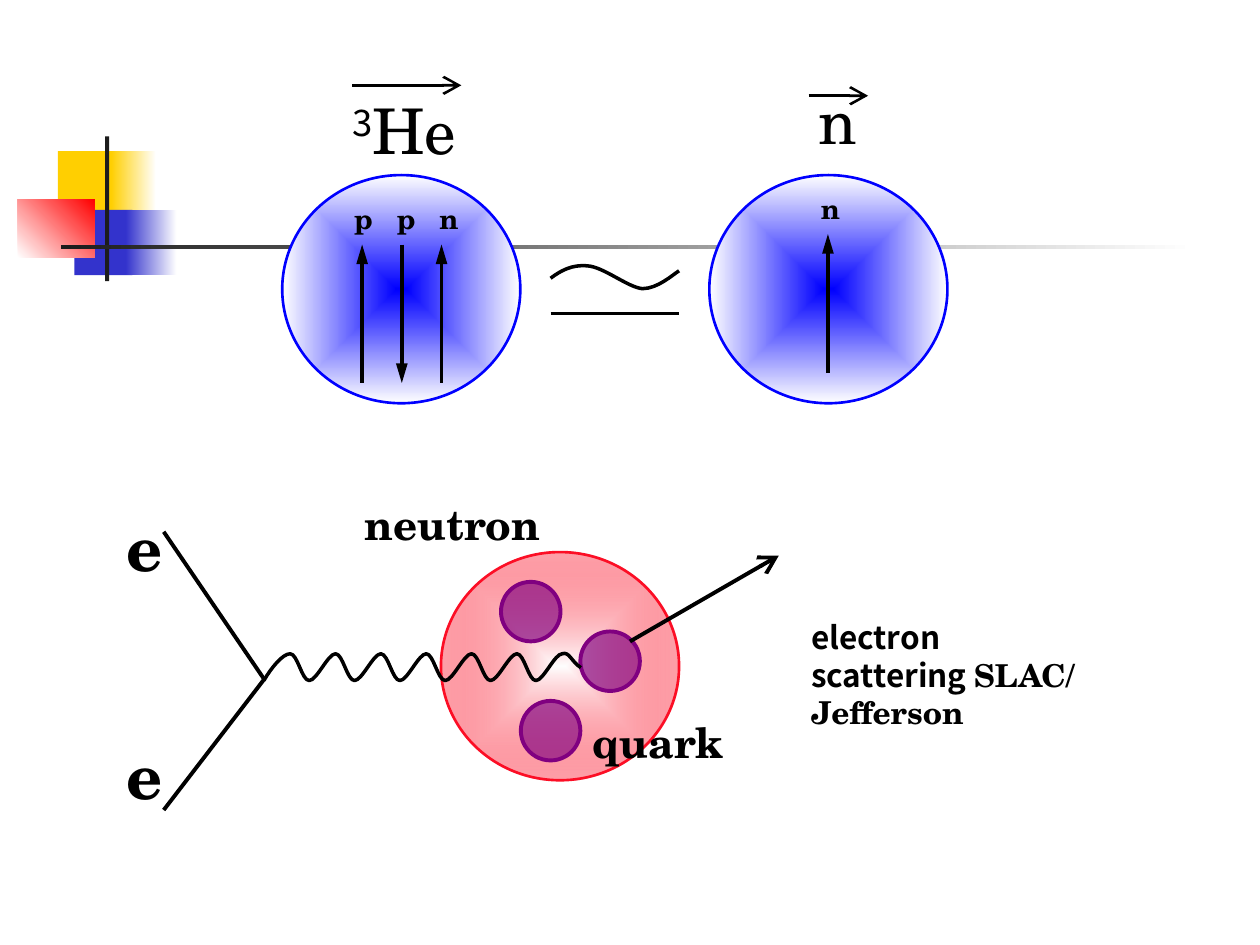
import pptx
import pptx.util
import pptx.dml.color
import pptx.enum.shapes
import pptx.enum.text
import pptx.oxml.ns
from lxml import etree

Cm, Pt = pptx.util.Cm, pptx.util.Pt
RGB = pptx.dml.color.RGBColor.from_string
KIND = pptx.enum.shapes.MSO_SHAPE
qn = pptx.oxml.ns.qn


class Theme:
    black, dark, white = "000000", "1C1C1C", "FFFFFF"
    gold, navy, red = "FFCF01", "3333CC", "FF0000"
    blue, rose, plum = "0000FF", "FC0E25", "800080"
    serif, sans = "TeX Gyre Schola", "Noto Sans CJK KR"
    big, mid, note, small = 36, 24, 18, 16


T = Theme

deck = pptx.Presentation()
deck.slide_width, deck.slide_height = Cm(25.4), Cm(19.05)
slide = deck.slides.add_slide(deck.slide_layouts[6])
shapes = slide.shapes


def draw(kind, box, first, last=None, angle=0, edge=None, alpha=None):
    """Add a shape; a second colour makes a gradient, angle None a radial one."""
    item = shapes.add_shape(kind, *map(Cm, box))
    item.shadow.inherit = False
    fill = item.fill
    if last:
        fill.gradient()
        for stop, tone in zip(fill.gradient_stops, (first, last)):
            stop.color.rgb = RGB(tone)
        if angle is None:
            lin = fill._xPr.find(".//" + qn("a:lin"))
            ring = etree.Element(qn("a:path"), {"path": "shape"})
            sides = {side: "50000" for side in "ltrb"}
            etree.SubElement(ring, qn("a:fillToRect"), sides)
            lin.getparent().replace(lin, ring)
        else:
            fill.gradient_angle = angle
    else:
        fill.solid()
        fill.fore_color.rgb = RGB(first)
    if alpha:
        # The last fill colour is the see-through one
        tones = fill._xPr.findall(".//" + qn("a:srgbClr"))
        etree.SubElement(tones[-1], qn("a:alpha"), val=str(alpha * 1000))
    if edge:
        item.line.color.rgb = RGB(edge[0])
        item.line.width = Pt(edge[1])
    else:
        item.line.fill.background()


def curve(start, spots):
    """Trace cubic curves; spots hold two handles and an end point for each."""
    pen = shapes.build_freeform(*map(Cm, start))
    pen.add_line_segments([tuple(map(Cm, spot)) for spot in spots], close=False)
    item = pen.convert_to_shape()
    # Join every three straight steps into one cubic curve
    steps = list(item._element.iter(qn("a:lnTo")))
    for i in range(0, len(steps), 3):
        bend = etree.Element(qn("a:cubicBezTo"))
        steps[i].addprevious(bend)
        for step in steps[i:i + 3]:
            bend.append(step[0])
            step.getparent().remove(step)
    item.shadow.inherit = False
    item.fill.background()
    item.line.color.rgb = RGB(T.black)
    item.line.width = Pt(2)


# Corner ornament and fading rule
for box, first, last, angle in [
    ((1.17, 3.05, 1.22, 1.32), T.gold, None, 0),
    ((2.24, 3.05, 0.91, 1.32), T.gold, T.white, 0),
    ((1.5, 4.23, 1.17, 1.32), T.navy, None, 0),
    ((2.54, 4.23, 1.02, 1.32), T.navy, T.white, 0),
    ((0.36, 4.02, 1.55, 1.17), T.white, T.red, 45),
    ((2.12, 2.75, 0.08, 2.92), T.dark, None, 0),
    ((1.23, 4.94, 22.86, 0.08), T.dark, T.white, 0),
]:
    draw(KIND.RECTANGLE, box, first, last, angle)

# Nuclei, neutron and its quarks
for left in (5.69, 14.3):
    draw(KIND.OVAL, (left, 3.53, 4.8, 4.6), T.blue, T.white, None, (T.blue, 1.5))
draw(KIND.OVAL, (8.89, 11.13, 4.8, 4.6), T.white, T.rose, None, (T.rose, 1.5), 39)
for left, top in [(11.7, 12.73), (10.1, 11.73), (10.5, 14.13)]:
    draw(KIND.OVAL, (left, top, 1.2, 1.2), T.plum, edge=(T.plum, 2.25), alpha=65)

# Tilde of the "nearly equal" sign
curve((11.1, 5.61), [
    (11.3, 5.46), (11.53, 5.33), (11.84, 5.36),
    (12.17, 5.38), (12.65, 5.79), (12.95, 5.82),
    (13.26, 5.82), (13.56, 5.54), (13.69, 5.46),
])

# Photon wave: six full periods, then a last crest that meets the quark
low, high, rise, pitch = 13.72, 13.18, 0.53, 0.914
wave = []
for turn in range(7):
    foot = 5.32 + turn * pitch
    crest, after = foot + rise, foot + pitch
    lift = low if turn else 13.46
    wave += [(foot + 0.15, lift), (crest - 0.15, high), (crest, high)]
    if turn < 6:
        wave += [(crest + 0.15, high), (after - 0.15, low), (after, low)]
wave += [(11.48, 13.13), (11.51, 13.33), (11.71, 13.46)]
curve((5.32, low), wave)

# Lines and arrows, each from its foot to its tip
for x1, y1, x2, y2, width, tip, girth in [
    (7.3, 7.72, 7.3, 4.93, 2.25, "triangle", "med"),
    (8.1, 4.93, 8.1, 7.72, 2.25, "triangle", "med"),
    (8.9, 7.72, 8.9, 4.93, 2.25, "triangle", "med"),
    (16.69, 7.52, 16.69, 4.72, 2.25, "triangle", "med"),
    (7.1, 1.72, 9.3, 1.72, 1.5, "arrow", "lg"),
    (16.3, 1.93, 17.5, 1.93, 1.5, "arrow", "lg"),
    (11.1, 6.32, 13.69, 6.32, 2, None, None),
    (3.3, 10.72, 5.33, 13.7, 2.25, None, None),
    (5.32, 13.7, 3.3, 16.33, 2.25, None, None),
    (12.7, 12.93, 15.7, 11.2, 2.25, "arrow", "lg"),
]:
    link = shapes.add_connector(
        pptx.enum.shapes.MSO_CONNECTOR.STRAIGHT, *map(Cm, (x1, y1, x2, y2)))
    link.line.color.rgb = RGB(T.black)
    link.line.width = Pt(width)
    if tip:
        etree.SubElement(link.line._get_or_add_ln(), qn("a:tailEnd"),
                         type=tip, w=girth, len="lg")
    etree.SubElement(link._element.spPr, qn("a:effectLst"))

# Labels: box, left margin, size, bold, runs of (text, font, baseline)
for box, inset, size, bold, runs in [
    ((6.89, 3.93, 2.79, 0.94), 0.25, T.small, True, [("p\tp\tn", T.serif, 0)]),
    ((16.3, 3.73, 0.99, 0.94), 0.25, T.small, True, [("n", T.serif, 0)]),
    ((6.5, 1.73, 3.61, 1.78), 0.6, T.big, False,
     [("3", T.sans, 30), ("He", T.serif, 0)]),
    ((15.9, 1.52, 2.01, 1.78), 0.6, T.big, False, [("n", T.serif, 0)]),
    ((2.3, 10.13, 1.4, 1.78), 0.25, T.big, True, [("e", T.serif, 0)]),
    ((2.3, 14.73, 1.4, 1.78), 0.25, T.big, True, [("e", T.serif, 0)]),
    ((11.7, 14.32, 3.61, 1.27), 0.25, T.mid, True, [("quark", T.serif, 0)]),
    ((7.1, 9.93, 4.19, 1.27), 0.25, T.mid, True, [("neutron", T.serif, 0)]),
    ((16.1, 12.33, 6.4, 1.78), 0.25, T.note, True,
     [("electron", T.sans, 0), None, ("scattering ", T.sans, 0),
      ("SLAC/", T.serif, 0), None, ("Jefferson", T.serif, 0)]),
]:
    frame = shapes.add_textbox(*map(Cm, box)).text_frame
    frame.word_wrap = True
    frame.auto_size = pptx.enum.text.MSO_AUTO_SIZE.SHAPE_TO_FIT_TEXT
    frame.margin_left = Cm(inset)
    para = frame.paragraphs[0]
    for part in runs:
        if part is None:
            para.add_line_break()
            continue
        words, face, base = part
        run = para.add_run()
        run.text = words
        run.font.name, run.font.size, run.font.bold = face, Pt(size), bold
        run.font.color.rgb = RGB(T.black)
        if base:
            run.font._element.set("baseline", str(base * 1000))
        if "\t" in words:
            stops = etree.SubElement(para._p.get_or_add_pPr(), qn("a:tabLst"))
            for spot in (0.86, 1.72):
                etree.SubElement(stops, qn("a:tab"), pos=str(Cm(spot)), algn="l")

deck.save("out.pptx")
